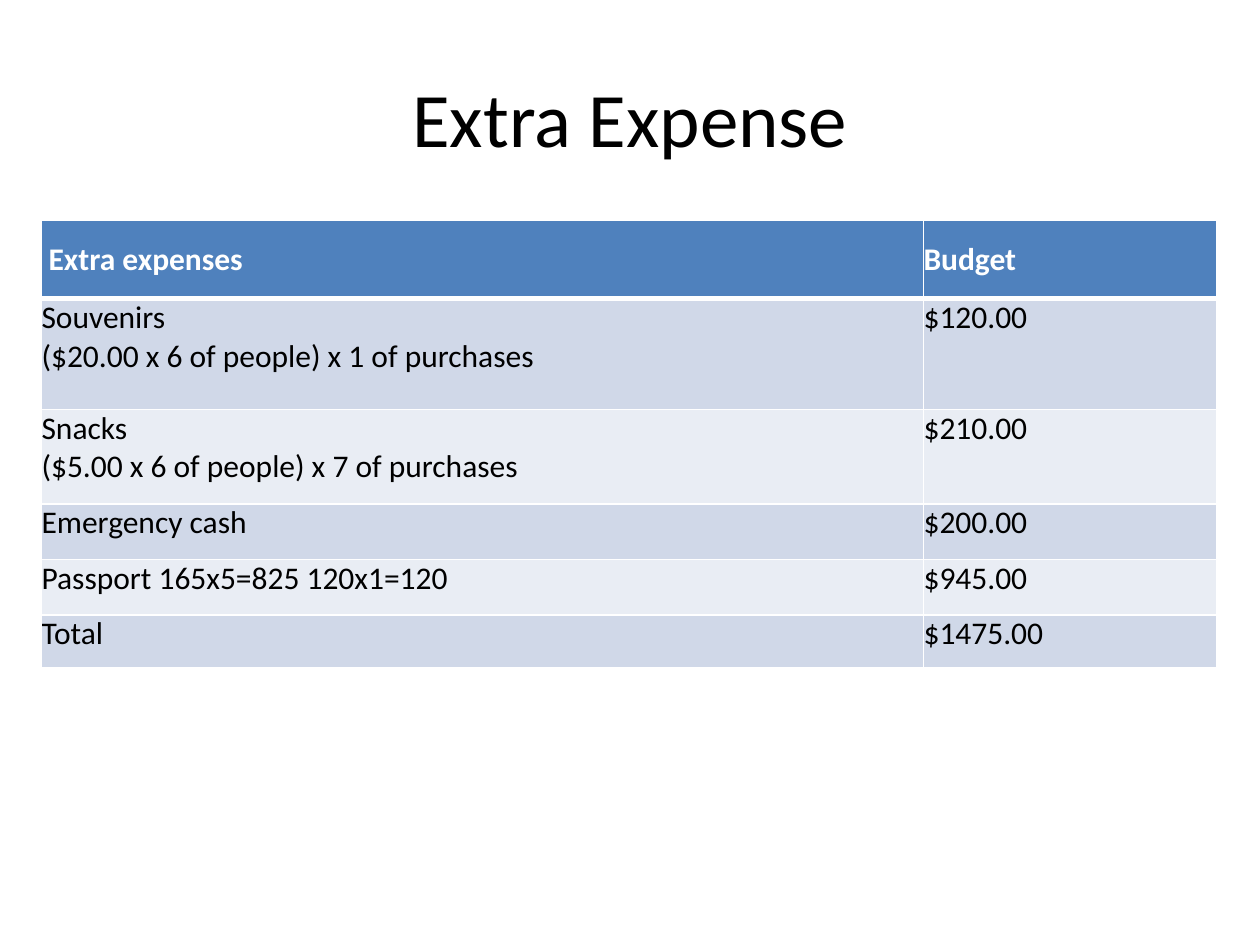
from lxml import etree
from pptx import Presentation, util as u
from pptx.dml.color import RGBColor
from pptx.enum import text
from pptx.oxml import ns

BUDGET = [
    (" Extra expenses", "Budget"),
    ("Souvenirs\n($20.00 x 6 of people) x 1 of purchases", "$120.00"),
    ("Snacks\n($5.00 x 6 of people) x 7 of purchases", "$210.00"),
    ("Emergency cash", "$200.00"),
    ("Passport 165x5=825 120x1=120", "$945.00"),
    ("Total", "$1475.00"),
]
COLUMN_WIDTHS = [7, 2.33]
ROW_HEIGHTS = [0.62, 0.88, 0.75, 0.44, 0.44, 0.42]


def color(value):
    return RGBColor.from_string(value)


class ExpenseSlide:
    font = "Calibri"
    ink = "000000"
    white = "FFFFFF"
    header_fill = "4F81BD"
    band_fills = ("E9EDF4", "D0D8E8")

    def __init__(self, presentation):
        self.slide = presentation.slides.add_slide(presentation.slide_layouts[6])

    def style(self, paragraph, size, ink, bold=False):
        paragraph.font.name = self.font
        paragraph.font.size = u.Pt(size)
        paragraph.font.bold = bold
        paragraph.font.color.rgb = color(ink)

    def title(self, wording, left, top, width, height):
        shape = self.slide.shapes.add_textbox(*map(u.Inches, (left, top, width, height)))
        frame = shape.text_frame
        frame.word_wrap = True
        frame.vertical_anchor = text.MSO_ANCHOR.MIDDLE
        frame.text = wording
        paragraph = frame.paragraphs[0]
        paragraph.alignment = text.PP_ALIGN.CENTER
        self.style(paragraph, 44, self.ink)

    def border(self, cell, side, width):
        properties = cell._tc.get_or_add_tcPr()
        line = etree.SubElement(properties, ns.qn(f"a:ln{side}"), w=str(u.Pt(width)))
        fill = etree.SubElement(line, ns.qn("a:solidFill"))
        etree.SubElement(fill, ns.qn("a:srgbClr"), val=self.white)

    def cell(self, cell, wording, row):
        header = row == 0
        for side in "LRTB":
            thick = (header and side == "B") or (row == 1 and side == "T")
            self.border(cell, side, 3 if thick else 1)
        cell.fill.solid()
        cell.fill.fore_color.rgb = color(self.header_fill if header else self.band_fills[row % 2])
        cell.margin_left = cell.margin_right = cell.margin_top = cell.margin_bottom = 0
        cell.vertical_anchor = text.MSO_ANCHOR.MIDDLE if header else text.MSO_ANCHOR.TOP
        cell.text_frame.text = wording
        for paragraph in cell.text_frame.paragraphs:
            self.style(paragraph, 18, self.white if header else self.ink, header)

    def table(self, rows, left, top, widths, heights):
        size = (left, top, sum(widths), sum(heights))
        shape = self.slide.shapes.add_table(len(rows), len(widths), *map(u.Inches, size))
        table = shape.table
        for column, width in zip(table.columns, widths):
            column.width = u.Inches(width)
        for row, height in zip(table.rows, heights):
            row.height = u.Inches(height)
        for row, wordings in enumerate(rows):
            for column, wording in enumerate(wordings):
                self.cell(table.cell(row, column), wording, row)


def main():
    presentation = Presentation()
    presentation.slide_width = u.Inches(10)
    presentation.slide_height = u.Inches(7.5)
    slide = ExpenseSlide(presentation)
    slide.title("Extra Expense", 0.5, 0.3, 9, 1.25)
    slide.table(BUDGET, 0.33, 1.75, COLUMN_WIDTHS, ROW_HEIGHTS)
    presentation.save("out.pptx")


if __name__ == "__main__":
    main()
